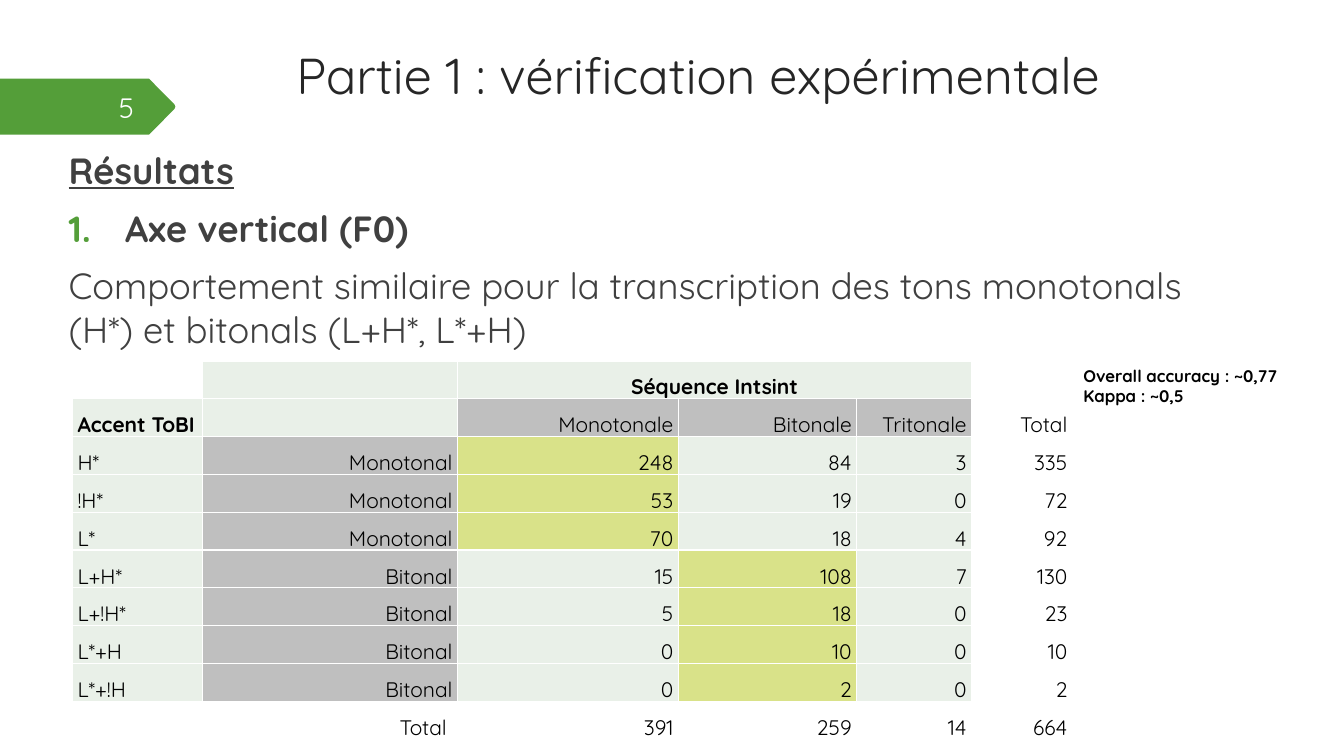
from lxml import etree
from pptx import Presentation
from pptx.dml.color import RGBColor
from pptx.enum.text import MSO_ANCHOR, MSO_AUTO_SIZE, PP_ALIGN
from pptx.oxml.ns import qn
from pptx.util import Pt

LEFT, CENTER, RIGHT = PP_ALIGN.LEFT, PP_ALIGN.CENTER, PP_ALIGN.RIGHT
TOP, MIDDLE, BOTTOM = MSO_ANCHOR.TOP, MSO_ANCHOR.MIDDLE, MSO_ANCHOR.BOTTOM
NO_FIT, GROW = MSO_AUTO_SIZE.NONE, MSO_AUTO_SIZE.SHAPE_TO_FIT_TEXT

FONT = "Quicksand"
GREEN, PALE, GREY, LIME = "549E39", "E9F0E8", "BFBFBF", "D9E289"
WHITE, BLACK = "FFFFFF", "000000"

COLUMN_WIDTHS = [92.9, 182.2, 157.7, 127.4, 82.1, 72]
ROW_HEIGHT = 26.4
HEADINGS = [
    ["", "", "Séquence Intsint", "", "", ""],
    ["Accent ToBI", "", "Monotonale", "Bitonale", "Tritonale", "Total"],
]
ACCENTS = [
    ["H*", "Monotonal", 248, 84, 3, 335],
    ["!H*", "Monotonal", 53, 19, 0, 72],
    ["L*", "Monotonal", 70, 18, 4, 92],
    ["L+H*", "Bitonal", 15, 108, 7, 130],
    ["L+!H*", "Bitonal", 5, 18, 0, 23],
    ["L*+H", "Bitonal", 0, 10, 0, 10],
    ["L*+!H", "Bitonal", 0, 2, 0, 2],
]
TOTALS = ["Total ", "", 391, 259, 14, 664]
MATCHING_COLUMN = {"Monotonal": 2, "Bitonal": 3}


def color(value):
    return RGBColor.from_string(value)


def write(paragraph, text, size=15, fill=BLACK, bold=False, underline=False,
          align=LEFT, before=0, spacing=1.0):
    """Fill a paragraph with text in one format."""
    paragraph.alignment = align
    paragraph.space_before = Pt(before)
    paragraph.line_spacing = spacing
    target = paragraph
    if text:
        target = paragraph.add_run()
        target.text = text
    font = target.font
    font.name, font.size = FONT, Pt(size)
    font.bold, font.underline = bold, underline
    font.color.rgb = color(fill)


def place(shape, box):
    shape.left, shape.top, shape.width, shape.height = map(Pt, box)


def set_bullet(paragraph, numbered=False):
    properties = paragraph._p.get_or_add_pPr()
    indent = Pt(40.3) if numbered else 0
    properties.set("marL", str(indent))
    properties.set("indent", str(-indent))
    if numbered:
        bullet_color = etree.SubElement(properties, qn("a:buClr"))
        etree.SubElement(bullet_color, qn("a:srgbClr"), val=GREEN)
        etree.SubElement(properties, qn("a:buAutoNum"), type="arabicPeriod")
    else:
        etree.SubElement(properties, qn("a:buNone"))


def add_page_marker(slide, box, number):
    left, top, width, height = box
    # Green arrow with a slightly blunted tip
    outline = [(0.85, 0), (0.995, 0.46), (1, 0.5), (0.995, 0.54), (0.85, 1), (0, 1)]
    builder = slide.shapes.build_freeform(Pt(left), Pt(top))
    builder.add_line_segments(
        [(Pt(left + x * width), Pt(top + y * height)) for x, y in outline], close=True)
    arrow = builder.convert_to_shape()
    arrow.shadow.inherit = False
    arrow.fill.solid()
    arrow.fill.fore_color.rgb = color(GREEN)
    arrow.line.fill.background()

    # Page number
    label = slide.shapes.add_textbox(Pt(left + 41.8), Pt(top + 5.7), Pt(61.2), Pt(28.8))
    frame = label.text_frame
    frame.word_wrap, frame.vertical_anchor = True, MIDDLE
    write(frame.paragraphs[0], number, size=20, fill="FEFFFF", align=RIGHT)


def add_title(slide, box, text):
    title = slide.shapes.title
    place(title, box)
    frame = title.text_frame
    frame.auto_size, frame.vertical_anchor = NO_FIT, TOP
    write(frame.paragraphs[0], text, size=36, fill="262626")


def add_body(slide, box):
    body = slide.placeholders[1]
    place(body, box)
    frame = body.text_frame
    frame.auto_size, frame.vertical_anchor = NO_FIT, TOP
    lines = [
        ("Résultats", {"bold": True, "underline": True}, False),
        ("Axe vertical (F0)", {"bold": True}, True),
        ("Comportement similaire pour la transcription des tons monotonals "
         "(H*) et bitonals (L+H*, L*+H)", {}, False),
    ]
    for index, (text, style, numbered) in enumerate(lines):
        paragraph = frame.add_paragraph() if index else frame.paragraphs[0]
        write(paragraph, text, size=26, fill="404040", before=10, **style)
        set_bullet(paragraph, numbered)


def set_borders(cell):
    properties = cell._tc.get_or_add_tcPr()
    for position, side in enumerate(("a:lnL", "a:lnR", "a:lnT", "a:lnB")):
        line = etree.Element(qn(side), w=str(Pt(1)))
        fill = etree.SubElement(line, qn("a:solidFill"))
        etree.SubElement(fill, qn("a:srgbClr"), val=WHITE)
        properties.insert(position, line)


def cell_fill(row, column, values, last_row):
    if row == last_row or column == 5 or (row, column) == (0, 0):
        return WHITE
    if row == 1 and column >= 2 or row >= 2 and column == 1:
        return GREY
    if row >= 2 and column == MATCHING_COLUMN[values[1]]:
        return LIME
    return PALE


def add_results_table(slide, left, top):
    rows = HEADINGS + ACCENTS + [TOTALS]
    last_row = len(rows) - 1
    table = slide.shapes.add_table(
        len(rows), len(COLUMN_WIDTHS), Pt(left), Pt(top),
        Pt(sum(COLUMN_WIDTHS)), Pt(ROW_HEIGHT * len(rows))).table
    table.first_row = table.horz_banding = False
    for column, width in zip(table.columns, COLUMN_WIDTHS):
        column.width = Pt(width)

    for row, values in enumerate(rows):
        table.rows[row].height = Pt(ROW_HEIGHT)
        for column, value in enumerate(values):
            cell = table.cell(row, column)
            cell.margin_left = cell.margin_right = Pt(3.6)
            cell.margin_top = cell.margin_bottom = 0
            cell.vertical_anchor = BOTTOM
            cell.fill.solid()
            cell.fill.fore_color.rgb = color(cell_fill(row, column, values, last_row))
            set_borders(cell)
            if row == 0:
                align = CENTER
            else:
                align = LEFT if column == 0 and row < last_row else RIGHT
            write(cell.text_frame.paragraphs[0], str(value), align=align, spacing=1.5,
                  bold=row == 0 or (row, column) == (1, 0))

    # Merged heading and total label
    table.cell(0, 2).merge(table.cell(0, 4))
    table.cell(last_row, 0).merge(table.cell(last_row, 1))


def add_scores(slide, box, lines):
    frame = slide.shapes.add_textbox(*map(Pt, box)).text_frame
    frame.word_wrap, frame.auto_size = True, GROW
    for index, text in enumerate(lines):
        paragraph = frame.add_paragraph() if index else frame.paragraphs[0]
        write(paragraph, text, size=12, bold=True)


def main():
    presentation = Presentation()
    presentation.slide_width, presentation.slide_height = Pt(960), Pt(540)
    slide = presentation.slides.add_slide(presentation.slide_layouts[1])
    add_title(slide, (204.5, 28.1, 702, 68.4), "Partie 1 : vérification expérimentale")
    add_body(slide, (41.8, 102.2, 864, 363.6))
    add_page_marker(slide, (0, 56.2, 125.3, 40), "5")
    add_results_table(slide, 51.8, 257.8)
    add_scores(slide, (766.8, 257.8, 182.9, 36),
               ["Overall accuracy : ~0,77", "Kappa : ~0,5"])
    presentation.save("out.pptx")


if __name__ == "__main__":
    main()
